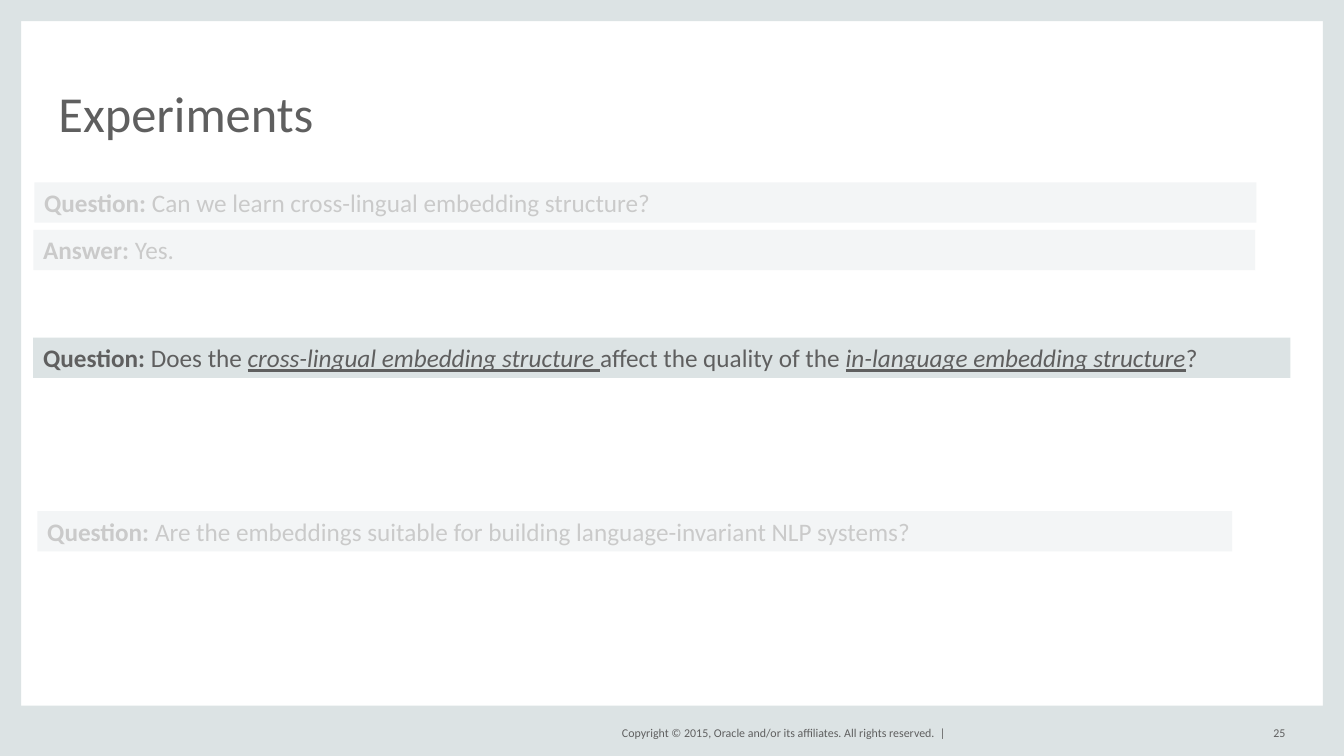
from lxml.etree import SubElement
from pptx import Presentation
from pptx.dml.color import RGBColor
from pptx.enum.shapes import MSO_SHAPE
from pptx.enum.text import MSO_ANCHOR, PP_ALIGN
from pptx.oxml.ns import qn
from pptx.util import Inches, Pt

WIDTH, HEIGHT = 13.33, 7.5
BAND, WHITE, GREY = "DCE3E4", "FFFFFF", "5F5F5F"


def color(hex_string):
    return RGBColor.from_string(hex_string)


class SlideBuilder:
    font_name = "Calibri"

    def __init__(self, slide):
        self.slide = slide

    def style(self, span, size, bold=False, emphasis=False):
        font = span.font
        font.name, font.size, font.bold = self.font_name, Pt(size), bold
        font.italic = font.underline = emphasis
        font.color.rgb = color(GREY)

    def clear_margins(self, frame):
        frame.margin_left = frame.margin_right = 0
        frame.margin_top = frame.margin_bottom = 0

    def title(self, text, left, top, width, height):
        title = self.slide.shapes.title
        title.left, title.top = Inches(left), Inches(top)
        title.width, title.height = Inches(width), Inches(height)
        frame = title.text_frame
        frame.text = text
        frame.vertical_anchor = MSO_ANCHOR.BOTTOM
        self.clear_margins(frame)
        para = frame.paragraphs[0]
        para.alignment, para.line_spacing = PP_ALIGN.LEFT, 0.8
        self.style(para.runs[0], 36)

    def rectangle(self, left, top, width, height, fill):
        box = self.slide.shapes.add_shape(
            MSO_SHAPE.RECTANGLE, Inches(left), Inches(top), Inches(width), Inches(height))
        box.shadow.inherit = False
        box.fill.solid()
        box.fill.fore_color.rgb = color(fill)
        box.line.fill.background()
        return box

    def statement(self, left, top, width, label, spans):
        frame = self.rectangle(left, top, width, 0.4, BAND).text_frame
        frame.word_wrap = True
        frame.vertical_anchor = MSO_ANCHOR.TOP
        para = frame.paragraphs[0]
        para.alignment = PP_ALIGN.LEFT
        for index, text in enumerate([label, *spans]):
            span = para.add_run()
            span.text = text
            # Every second span after the label is emphasised
            self.style(span, 18, bold=index == 0, emphasis=index > 0 and index % 2 == 0)

    def veil(self, left, top):
        box = self.rectangle(left, top, 12.81, 1.64, WHITE)
        box.line.color.rgb = color(WHITE)
        box.line.width = Pt(1.5)
        fill_color = box.fill._xPr.find(qn("a:solidFill"))[0]
        SubElement(fill_color, qn("a:alpha")).set("val", "67000")

    def footer(self, text, left, width):
        box = self.slide.shapes.add_textbox(
            Inches(left), Inches(7.17), Inches(width), Inches(0.2))
        frame = box.text_frame
        frame.word_wrap = True
        frame.vertical_anchor = MSO_ANCHOR.MIDDLE
        self.clear_margins(frame)
        frame.text = text
        para = frame.paragraphs[0]
        para.alignment = PP_ALIGN.RIGHT
        self.style(para.runs[0], 8.5)


def main():
    deck = Presentation()
    deck.slide_width, deck.slide_height = Inches(WIDTH), Inches(HEIGHT)
    page = SlideBuilder(deck.slides.add_slide(deck.slide_layouts[5]))

    # Frame around the page
    edge, base = 0.21, 0.5
    for bounds in [(0, 0, edge, HEIGHT), (WIDTH - edge, 0, edge, HEIGHT),
                   (0, HEIGHT - base, WIDTH, base), (0, 0, WIDTH, edge)]:
        page.rectangle(*bounds, BAND)

    # Title and footer
    page.title("Experiments", 0.58, 0.44, 12.17, 0.97)
    page.footer("Copyright © 2015, Oracle and/or its affiliates. All rights reserved.  |", 5.88, 3.5)
    page.footer("25", 12.33, 0.42)

    # Questions and answer
    page.statement(0.33, 2.28, 12.12, "Answer:", [" Yes."])
    page.statement(0.34, 1.81, 12.12, "Question: ",
                   ["Can we learn cross-lingual embedding structure?"])
    page.statement(0.33, 3.35, 12.47, "Question: ",
                   ["Does the ", "cross-lingual embedding structure ",
                    "affect the quality of the ", "in-language embedding structure", "?"])
    page.statement(0.37, 5.07, 11.85, "Question: ",
                   ["Are the embeddings suitable for building language-invariant NLP systems?"])

    # Veils that fade the other questions
    page.veil(0.26, 1.53)
    page.veil(0.28, 4.57)

    deck.save("out.pptx")


if __name__ == "__main__":
    main()
